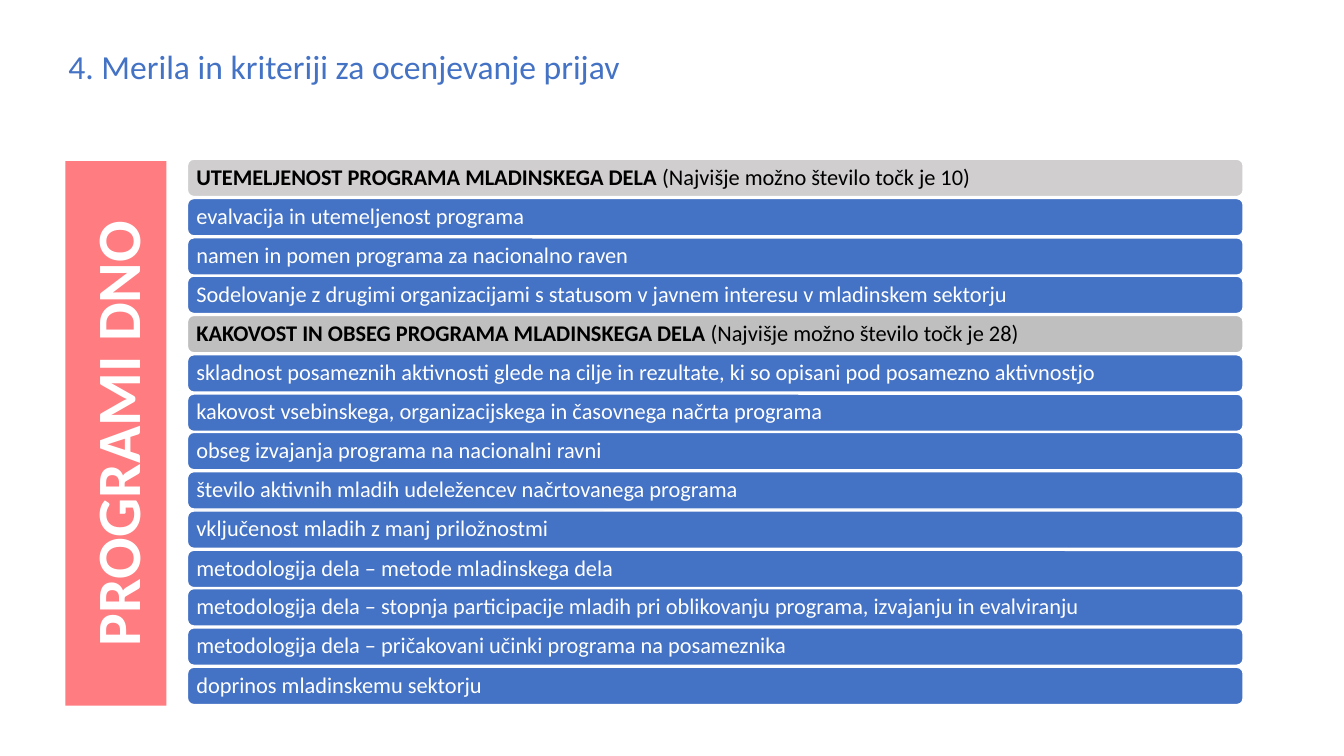
from dataclasses import dataclass

from pptx import Presentation
from pptx.dml.color import RGBColor
from pptx.enum.shapes import MSO_SHAPE as Shape
from pptx.enum.text import MSO_ANCHOR as Anchor, MSO_AUTO_SIZE as AutoSize, PP_ALIGN as Align
from pptx.util import Emu, Pt

EMU_PER_PX = 9144
BLUE, WHITE, BLACK, CORAL = "4472C4", "FFFFFF", "000000", "FF7C80"
LIGHT_GREY, MID_GREY = "D0CECE", "BFBFBF"
FIRST_TOP, LAST_TOP = 158, 662


@dataclass(frozen=True)
class Criterion:
    text: str
    note: str = ""
    fill: str = BLUE
    color: str = WHITE


CRITERIA = [
    Criterion("UTEMELJENOST PROGRAMA MLADINSKEGA DELA ", "(Najvišje možno število točk je 10)", LIGHT_GREY, BLACK),
    Criterion("evalvacija in utemeljenost programa"),
    Criterion("namen in pomen programa za nacionalno raven"),
    Criterion("Sodelovanje z drugimi organizacijami s statusom v javnem interesu v mladinskem sektorju"),
    Criterion("KAKOVOST IN OBSEG PROGRAMA MLADINSKEGA DELA ", "(Najvišje možno število točk je 28)", MID_GREY, BLACK),
    Criterion("skladnost posameznih aktivnosti glede na cilje in rezultate, ki so opisani pod posamezno aktivnostjo"),
    Criterion("kakovost vsebinskega, organizacijskega in časovnega načrta programa"),
    Criterion("obseg izvajanja programa na nacionalni ravni"),
    Criterion("število aktivnih mladih udeležencev načrtovanega programa"),
    Criterion("vključenost mladih z manj priložnostmi"),
    Criterion("metodologija dela – metode mladinskega dela"),
    Criterion("metodologija dela – stopnja participacije mladih pri oblikovanju programa, izvajanju in evalviranju"),
    Criterion("metodologija dela – pričakovani učinki programa na posameznika"),
    Criterion("doprinos mladinskemu sektorju"),
]


def px(value: int) -> Emu:
    return Emu(value * EMU_PER_PX)


def rgb(color: str) -> RGBColor:
    return RGBColor.from_string(color)


def set_all(target, values: dict) -> None:
    for name, value in values.items():
        setattr(target, name, value)


def add_span(para, text: str, size: int, color: str, bold: bool = False) -> None:
    span = para.add_run()
    span.text = text
    set_all(span.font, {"name": "Calibri", "size": Pt(size), "bold": bold})
    span.font.color.rgb = rgb(color)


def add_box(page, kind: Shape, left: int, top: int, width: int, height: int, fill: str):
    box = page.shapes.add_shape(kind, px(left), px(top), px(width), px(height))
    box.shadow.inherit = False
    box.fill.solid()
    box.fill.fore_color.rgb = rgb(fill)
    box.line.fill.background()
    box.text_frame.vertical_anchor = Anchor.MIDDLE
    return box


def add_title(page) -> None:
    frame = page.shapes.add_textbox(px(58), px(41), px(572), px(50)).text_frame
    set_all(frame, {"word_wrap": False, "auto_size": AutoSize.SHAPE_TO_FIT_TEXT})
    add_span(frame.paragraphs[0], "4. Merila in kriteriji za ocenjevanje prijav", 24, BLUE)


def add_criterion(page, criterion: Criterion, top: int) -> None:
    box = add_box(page, Shape.ROUNDED_RECTANGLE, 186, top, 1047, 37, criterion.fill)
    box.line.color.rgb = rgb(WHITE)
    box.line.width = Pt(1)
    sides = ("left", "top", "right", "bottom")
    set_all(box.text_frame, {"word_wrap": True} | {f"margin_{side}": px(7) for side in sides})
    para = box.text_frame.paragraphs[0]
    set_all(para, {"alignment": Align.LEFT, "line_spacing": 0.9})
    add_span(para, criterion.text, 16, criterion.color, bold=bool(criterion.note))
    if criterion.note:
        add_span(para, criterion.note, 16, criterion.color)


def add_side_label(page) -> None:
    box = add_box(page, Shape.RECTANGLE, 65, 160, 100, 540, CORAL)
    box.text_frame._txBody.bodyPr.set("vert", "vert270")
    para = box.text_frame.paragraphs[0]
    para.alignment = Align.CENTER
    add_span(para, "PROGRAMI DNO", 44, WHITE, bold=True)


def main() -> None:
    deck = Presentation()
    set_all(deck, {"slide_width": px(1333), "slide_height": px(750)})
    page = deck.slides.add_slide(deck.slide_layouts[6])
    add_title(page)
    step = (LAST_TOP - FIRST_TOP) / (len(CRITERIA) - 1)
    for index, criterion in enumerate(CRITERIA):
        add_criterion(page, criterion, FIRST_TOP + round(index * step))
    add_side_label(page)
    deck.save("out.pptx")


if __name__ == "__main__":
    main()
